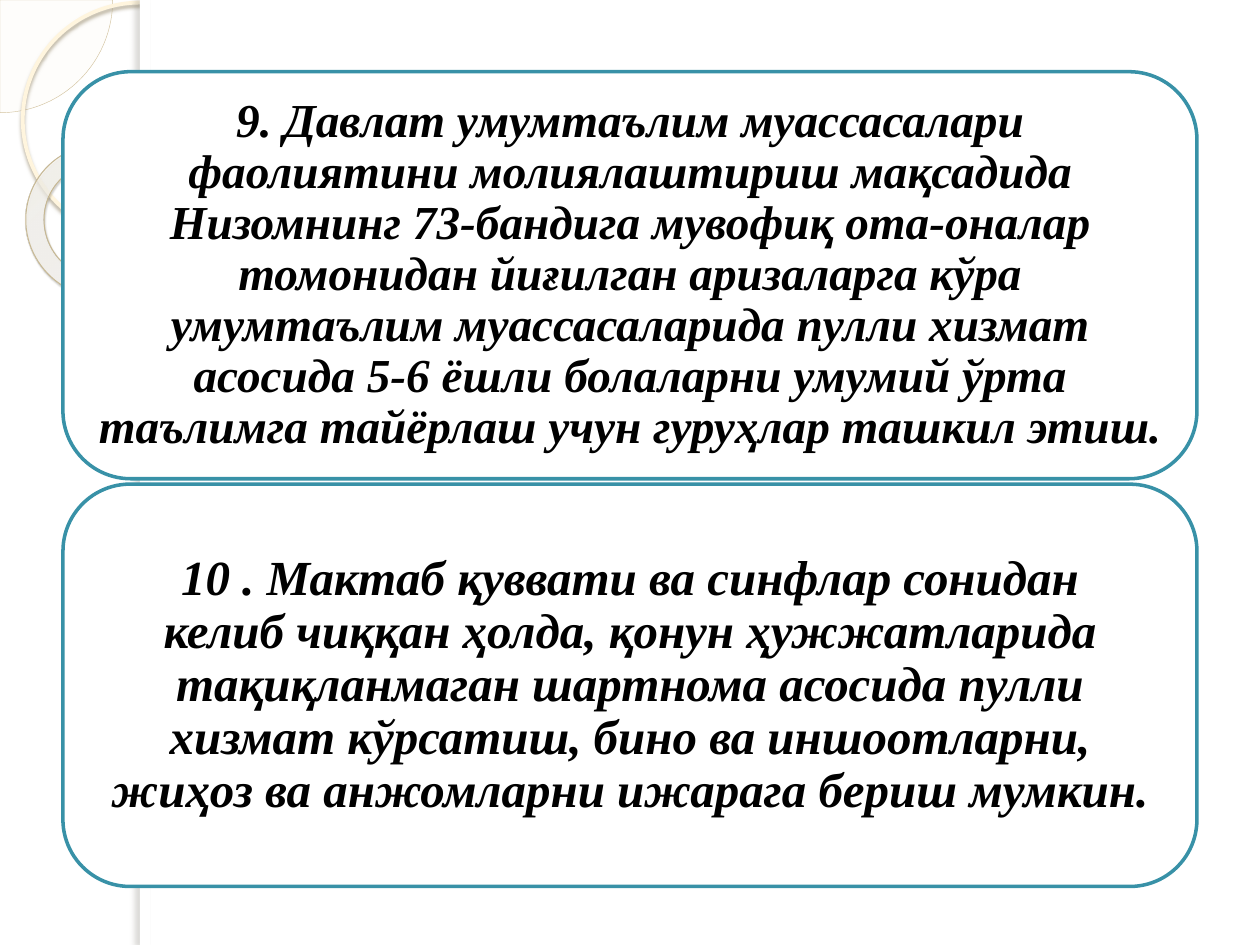
from dataclasses import dataclass

from lxml.etree import SubElement
from pptx import Presentation
from pptx.dml.color import RGBColor
from pptx.enum.shapes import MSO_SHAPE
from pptx.enum.text import MSO_ANCHOR, PP_ALIGN
from pptx.oxml import parse_xml
from pptx.oxml.ns import nsdecls, qn
from pptx.util import Pt


@dataclass(frozen=True)
class Theme:
    """Colours, font and type sizes of the slide."""
    font: str = "Times New Roman"
    paper: str = "FFFFFF"
    ink: str = "000000"
    card_line: str = "3891A7"
    pie_fill: str = "FEFAF4"
    pie_line: str = "D3C39F"
    ring_line: str = "FFF5DE"
    ring_shadow: str = "B0A68F"
    donut_line: str = "C7B893"
    donut_shadow: str = "5A5444"
    donut_stops: tuple = ((0, "FFFCF6", 70), (70, "FFFEFB", 55), (100, "F0D28E", 60))
    panel_shadow: str = "736F63"
    finance_size: int = 27
    rental_size: int = 28


THEME = Theme()


def add_figure(slide, kind, box, fill=None, line=None, width=0):
    """Add a preset shape in a box of points, with plain fill and line."""
    figure = slide.shapes.add_shape(kind, *(Pt(length) for length in box))
    figure.shadow.inherit = False
    if fill:
        figure.fill.solid()
        figure.fill.fore_color.rgb = RGBColor.from_string(fill)
    else:
        figure.fill.background()
    if line:
        figure.line.color.rgb = RGBColor.from_string(line)
        figure.line.width = Pt(width)
    else:
        figure.line.fill.background()
    return figure


def set_alpha(color, percent):
    """Make a colour element partly transparent."""
    SubElement(color, qn("a:alpha"), val=str(percent * 1000))


def cast_shadow(figure, color, alpha, blur, distance, angle):
    """Give a figure an outer shadow, in points and degrees."""
    effects = figure._element.spPr.find(qn("a:effectLst"))
    shadow = SubElement(effects, qn("a:outerShdw"), blurRad=str(Pt(blur)),
                        dist=str(Pt(distance)), dir=str(angle * 60000),
                        algn="tl", rotWithShape="0")
    set_alpha(SubElement(shadow, qn("a:srgbClr"), val=color), alpha)


def fill_radial(figure, stops):
    """Fill a figure with a circular gradient of translucent stops."""
    stop_list = "".join(
        f'<a:gs pos="{position * 1000}"><a:srgbClr val="{color}">'
        f'<a:alpha val="{alpha * 1000}"/></a:srgbClr></a:gs>'
        for position, color, alpha in stops)
    gradient = parse_xml(
        f'<a:gradFill {nsdecls("a")} rotWithShape="1"><a:gsLst>{stop_list}</a:gsLst>'
        '<a:path path="circle"><a:fillToRect l="-408000" t="-50000" '
        'r="508000" b="150000"/></a:path></a:gradFill>')
    properties = figure._element.spPr
    properties.replace(properties.find(qn("a:noFill")), gradient)


def add_circles(slide, left, top):
    """Draw the pie, ring and donut around the given corner."""
    pie = add_figure(slide, MSO_SHAPE.PIE, (left - 64.4, top - 64.4, 128.8, 128.8),
                     THEME.pie_fill, THEME.pie_line, 0.25)
    pie.adjustments[0] = 0
    pie.adjustments[1] = 54
    set_alpha(pie._element.spPr.find(qn("a:solidFill"))[0], 33)

    ring = add_figure(slide, MSO_SHAPE.OVAL, (left + 13, top + 1.5, 134, 134),
                      line=THEME.ring_line, width=2.15)
    cast_shadow(ring, THEME.ring_shadow, 85, 2, 2, 90)

    donut = add_figure(slide, MSO_SHAPE.DONUT, (left + 14.4, top + 82.8, 88.6, 87),
                       line=THEME.donut_line, width=0.58)
    donut.adjustments[0] = 0.12
    donut.rotation = 38.6
    fill_radial(donut, THEME.donut_stops)
    cast_shadow(donut, THEME.donut_shadow, 35, 1, 1.2, 75)


def add_panel(slide, left, top, width, height):
    """Draw the white page panel and its shaded left edge."""
    add_figure(slide, MSO_SHAPE.RECTANGLE, (left, top, width, height), THEME.paper)
    edge = add_figure(slide, MSO_SHAPE.RECTANGLE, (left, top, 5.8, height), THEME.paper)
    cast_shadow(edge, THEME.panel_shadow, 25, 3, 3, 180)


def add_card(slide, box, lines, size, inset):
    """Place one rounded card with its centred statement."""
    card = add_figure(slide, MSO_SHAPE.ROUNDED_RECTANGLE, box,
                      THEME.paper, THEME.card_line, 2)
    frame = card.text_frame
    frame.word_wrap = True
    frame.vertical_anchor = MSO_ANCHOR.MIDDLE
    frame.margin_left = frame.margin_right = Pt(inset)
    frame.margin_top = frame.margin_bottom = Pt(inset)
    statement = frame.paragraphs[0]
    statement.alignment = PP_ALIGN.CENTER
    statement.line_spacing = 0.9
    for index, wording in enumerate(lines):
        if index:
            statement.add_line_break()
        run = statement.add_run()
        run.text = wording
        run.font.name = THEME.font
        run.font.size = Pt(size)
        run.font.bold = run.font.italic = True
        run.font.color.rgb = RGBColor.from_string(THEME.ink)


def main():
    """Build and save the slide."""
    deck = Presentation()
    deck.slide_width, deck.slide_height = Pt(720), Pt(540)
    slide = deck.slides.add_slide(deck.slide_layouts[6])
    add_circles(slide, 0, 0)
    add_panel(slide, 80, 0, 640, 540)
    finance = (
        "9. Давлат умумтаълим муассасалари фаолиятини молиялаштириш мақсадида "
        "Низомнинг 73-бандига мувофиқ ота-оналар томонидан йиғилган аризаларга "
        "кўра умумтаълим муассасаларида пулли хизмат асосида 5-6 ёшли болаларни "
        "умумий ўрта таълимга тайёрлаш учун гуруҳлар ташкил этиш.",)
    rental = (
        "10 . Мактаб қуввати ва синфлар сонидан",
        "келиб чиққан ҳолда, қонун ҳужжатларида тақиқланмаган шартнома асосида "
        "пулли хизмат кўрсатиш, бино ва иншоотларни, жиҳоз ва анжомларни "
        "ижарага бериш мумкин.")
    add_card(slide, (36, 41, 648, 232.6), finance, THEME.finance_size, 8.1)
    add_card(slide, (36, 276.7, 648, 229.9), rental, THEME.rental_size, 8.4)
    deck.save("out.pptx")


if __name__ == "__main__":
    main()
